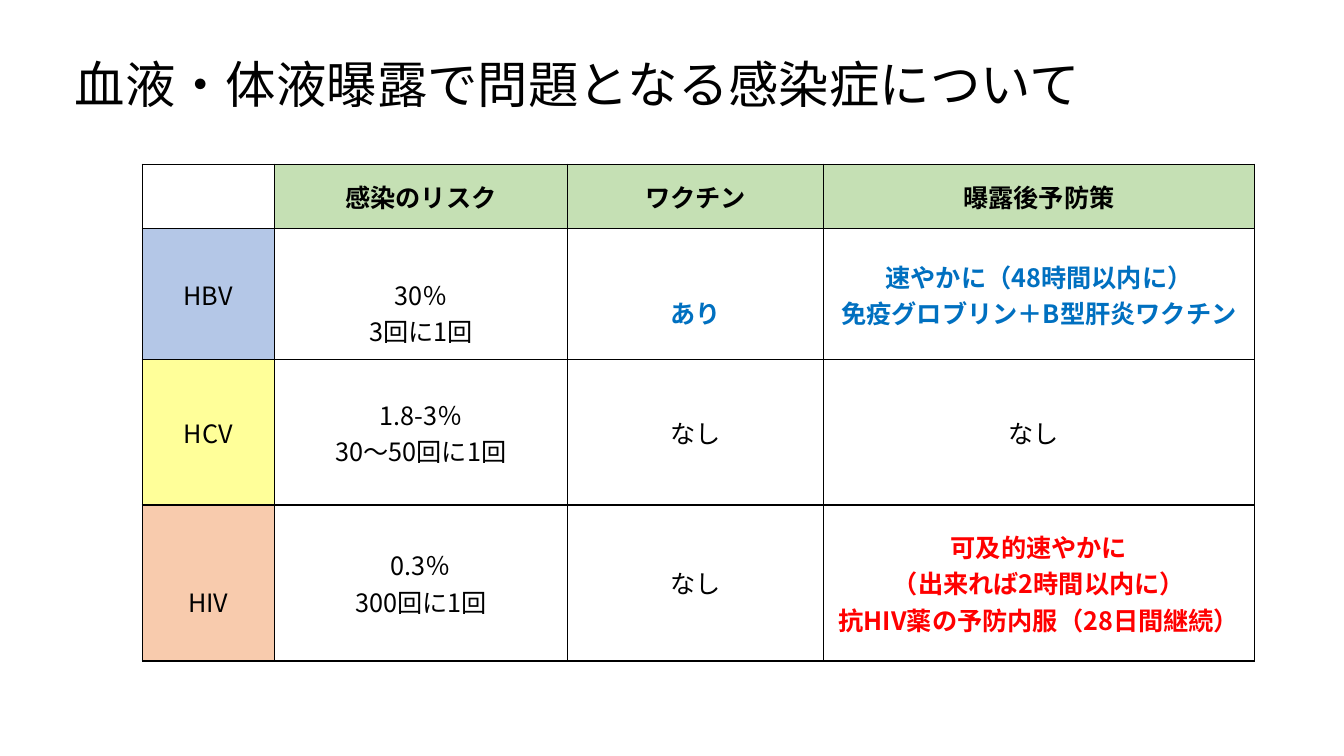
from lxml.etree import SubElement
from pptx import Presentation
from pptx.dml.color import RGBColor
from pptx.enum.text import MSO_ANCHOR, PP_ALIGN
from pptx.oxml.ns import qn
from pptx.util import Pt

EMU_PER_PX = 9144
FONT = "Noto Sans CJK JP"
BLACK = RGBColor(0x00, 0x00, 0x00)
BLUE = RGBColor(0x00, 0x70, 0xC0)
RED = RGBColor(0xFF, 0x00, 0x00)
GREEN_FILL = RGBColor(0xC5, 0xE0, 0xB4)
BLUE_FILL = RGBColor(0xB4, 0xC7, 0xE7)
YELLOW_FILL = RGBColor(0xFF, 0xFF, 0x99)
ORANGE_FILL = RGBColor(0xF8, 0xCB, 0xAD)

LINE = 36
PLAIN = {"bold": False, "color": BLACK}
HEADER = {"bold": True, "color": BLACK, "fill": GREEN_FILL}
AVAILABLE = {"bold": True, "color": BLUE}
URGENT = {"bold": True, "color": RED}
LOWERED = {"margin_top": 5 + LINE}
INDENTED = {"margin_left": 183, "align": PP_ALIGN.LEFT}

COLUMN_WIDTHS = [131, 291, 254, 427]
ROW_HEIGHTS = [64, 130, 144, 132]
ROWS = [
    [
        ([], PLAIN),
        (["感染のリスク"], HEADER),
        (["ワクチン"], HEADER),
        (["曝露後予防策"], HEADER),
    ],
    [
        (["HBV"], PLAIN | {"fill": BLUE_FILL}),
        (["30％", "3回に1回"], PLAIN | LOWERED),
        (["あり"], AVAILABLE | LOWERED),
        (["速やかに（48時間以内に）", "免疫グロブリン＋B型肝炎ワクチン"], AVAILABLE),
    ],
    [
        (["HCV"], PLAIN | {"fill": YELLOW_FILL}),
        (["1.8-3％", "30～50回に1回"], PLAIN),
        (["なし"], PLAIN),
        (["なし"], PLAIN | INDENTED),
    ],
    [
        (["HIV"], PLAIN | LOWERED | {"fill": ORANGE_FILL}),
        (["0.3％", "300回に1回"], PLAIN),
        (["なし"], PLAIN),
        (["可及的速やかに", "（出来れば2時間以内に）", "抗HIV薬の予防内服（28日間継続）"], URGENT),
    ],
]


def px(length):
    return length * EMU_PER_PX


class SlideBuilder:
    margins = {"margin_left": 8, "margin_top": 5, "margin_right": 8, "margin_bottom": 5}

    def __init__(self, presentation):
        self.slide = presentation.slides.add_slide(presentation.slide_layouts[5])

    def add_text(self, paragraph, text, size, color, bold=False):
        run = paragraph.add_run()
        run.text = text
        for name, value in {"name": FONT, "size": Pt(size), "bold": bold}.items():
            setattr(run.font, name, value)
        run.font.color.rgb = color
        SubElement(run._r.get_or_add_rPr(), qn("a:ea"), typeface=FONT)

    def title(self, text, left, top, width, height):
        shape = self.slide.shapes.title
        box = {"left": left, "top": top, "width": width, "height": height}
        for name, value in box.items():
            setattr(shape, name, px(value))
        shape.text_frame.vertical_anchor = MSO_ANCHOR.TOP
        paragraph = shape.text_frame.paragraphs[0]
        for name, value in {"alignment": PP_ALIGN.LEFT, "line_spacing": 0.9}.items():
            setattr(paragraph, name, value)
        self.add_text(paragraph, text, 36, BLACK)

    def border(self, cell):
        properties = cell._tc.get_or_add_tcPr()
        for side in ("lnL", "lnR", "lnT", "lnB"):
            line = SubElement(properties, qn(f"a:{side}"), w=str(int(Pt(1))))
            fill = SubElement(line, qn("a:solidFill"))
            SubElement(fill, qn("a:srgbClr"), val=str(BLACK))

    def cell(self, cell, lines, style):
        self.border(cell)
        for name, value in self.margins.items():
            setattr(cell, name, px(style.get(name, value)))
        cell.vertical_anchor = MSO_ANCHOR.MIDDLE
        if "fill" in style:
            cell.fill.solid()
            cell.fill.fore_color.rgb = style["fill"]
        else:
            cell.fill.background()
        frame = cell.text_frame
        for index, text in enumerate(lines):
            paragraph = frame.add_paragraph() if index else frame.paragraphs[0]
            paragraph.alignment = style.get("align", PP_ALIGN.CENTER)
            self.add_text(paragraph, text, 18, style["color"], style["bold"])

    def table(self, rows, left, top, widths, heights):
        table = self.slide.shapes.add_table(
            len(heights), len(widths), px(left), px(top), px(sum(widths)), px(sum(heights))
        ).table
        for name in ("first_row", "horz_banding"):
            setattr(table, name, False)
        for column, width in zip(table.columns, widths):
            column.width = px(width)
        for row, height, contents in zip(table.rows, heights, rows):
            row.height = px(height)
            for cell, (lines, style) in zip(row.cells, contents):
                self.cell(cell, lines, style)


def main():
    presentation = Presentation()
    presentation.slide_width = px(1333)
    presentation.slide_height = px(750)
    builder = SlideBuilder(presentation)
    builder.title("血液・体液曝露で問題となる感染症について", 64, 54, 1153, 90)
    builder.table(ROWS, 141, 163, COLUMN_WIDTHS, ROW_HEIGHTS)
    presentation.save("out.pptx")


if __name__ == "__main__":
    main()
